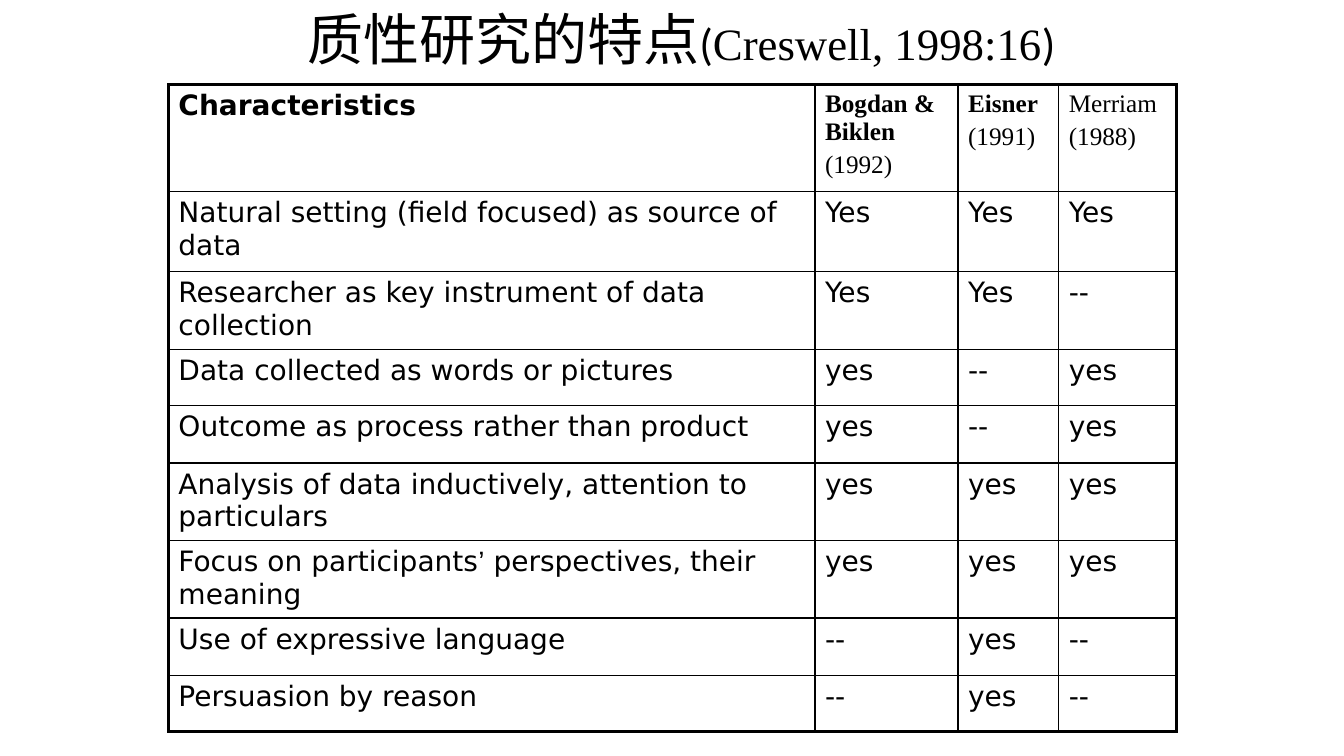
from lxml import etree
from pptx import Presentation
from pptx.dml.color import RGBColor
from pptx.enum import text
from pptx.oxml import ns
from pptx.util import Inches, Pt

BLACK = RGBColor(0x00, 0x00, 0x00)
SANS, SERIF = "DejaVu Sans", "Times New Roman"
THIN, THICK = Pt(1), Pt(2.25)

TITLE_SPANS = [
    ("质性研究的特点", "Calibri", 40),
    ("(", "Calibri", 32),
    ("Creswell, 1998:16", SERIF, 32),
    (")", "Calibri", 32),
]
# Author, year, whether the author is bold
STUDIES = [
    ("Bogdan & Biklen", "(1992)", True),
    ("Eisner", "(1991)", True),
    ("Merriam", "(1988)", False),
]
CHARACTERISTICS = [
    ("Natural setting (field focused) as source of data", "Yes", "Yes", "Yes"),
    ("Researcher as key instrument of data collection", "Yes", "Yes", "--"),
    ("Data collected as words or pictures", "yes", "--", "yes"),
    ("Outcome as process rather than product", "yes", "--", "yes"),
    ("Analysis of data inductively, attention to particulars", "yes", "yes", "yes"),
    ("Focus on participants’ perspectives, their meaning", "yes", "yes", "yes"),
    ("Use of expressive language", "--", "yes", "--"),
    ("Persuasion by reason", "--", "yes", "--"),
]
COLUMN_WIDTHS = [6.42, 1.42, 1, 1.17]
ROW_HEIGHTS = [1.06, 0.8, 0.77, 0.56, 0.57, 0.77, 0.77, 0.57, 0.56]


def set_font(font, name, size, bold=False):
    font.name, font.size, font.bold = name, Pt(size), bold
    font.color.rgb = BLACK


def add_title(page, left, top, width, height):
    title = page.shapes.title
    title.left, title.top, title.width, title.height = left, top, width, height
    frame = title.text_frame
    frame.word_wrap = True
    frame.auto_size = text.MSO_AUTO_SIZE.NONE
    frame.vertical_anchor = text.MSO_ANCHOR.MIDDLE
    para = frame.paragraphs[0]
    para.alignment = text.PP_ALIGN.CENTER
    for words, name, size in TITLE_SPANS:
        span = para.add_run()
        span.text = words
        set_font(span.font, name, size)


def set_borders(cell, widths):
    properties = cell._tc.get_or_add_tcPr()
    for side, width in zip("LRTB", widths):
        line = etree.SubElement(properties, ns.qn(f"a:ln{side}"), w=str(width))
        fill = etree.SubElement(line, ns.qn("a:solidFill"))
        etree.SubElement(fill, ns.qn("a:srgbClr"), val=str(BLACK))


def fill_heading(cell, author, year, bold):
    frame = cell.text_frame
    frame.text = author
    set_font(frame.paragraphs[0].font, SERIF, 18, bold)
    para = frame.add_paragraph()
    para.text = year
    para.space_before = Pt(3.6)
    set_font(para.font, SERIF, 18)


def fill_cell(cell, words, bold=False):
    para = cell.text_frame.paragraphs[0]
    set_font(para.font, SANS, 20, bold)
    # The apostrophe is set in its own font
    before, apostrophe, after = words.partition("’")
    for part in filter(None, (before, apostrophe, after)):
        span = para.add_run()
        span.text = part
        if part == "’":
            span.font.name = "Arial"


def add_comparison(page, left, top, width, height):
    rows, columns = len(ROW_HEIGHTS), len(COLUMN_WIDTHS)
    table = page.shapes.add_table(rows, columns, left, top, width, height).table
    table.first_row = table.horz_banding = False
    for column, share in zip(table.columns, COLUMN_WIDTHS):
        column.width = int(width * share / sum(COLUMN_WIDTHS))
    for row, share in zip(table.rows, ROW_HEIGHTS):
        row.height = int(height * share / sum(ROW_HEIGHTS))

    # Heading row
    fill_cell(table.cell(0, 0), "Characteristics", bold=True)
    for j, study in enumerate(STUDIES, 1):
        fill_heading(table.cell(0, j), *study)

    # Characteristics and answers
    for i, entries in enumerate(CHARACTERISTICS, 1):
        for j, words in enumerate(entries):
            fill_cell(table.cell(i, j), words)

    # Thick outer frame, thin inner lines
    for i in range(rows):
        for j in range(columns):
            outer = (j == 0, j == columns - 1, i == 0, i == rows - 1)
            cell = table.cell(i, j)
            set_borders(cell, [THICK if edge else THIN for edge in outer])
            cell.fill.background()


def main():
    deck = Presentation()
    deck.slide_width, deck.slide_height = Inches(13.33), Inches(7.5)
    page = deck.slides.add_slide(deck.slide_layouts.get_by_name("Title Only"))
    add_title(page, Inches(2.25), Inches(0), Inches(9.02), Inches(0.75))
    add_comparison(page, Inches(1.67), Inches(0.84), Inches(10), Inches(6.42))
    deck.save("out.pptx")


if __name__ == "__main__":
    main()
